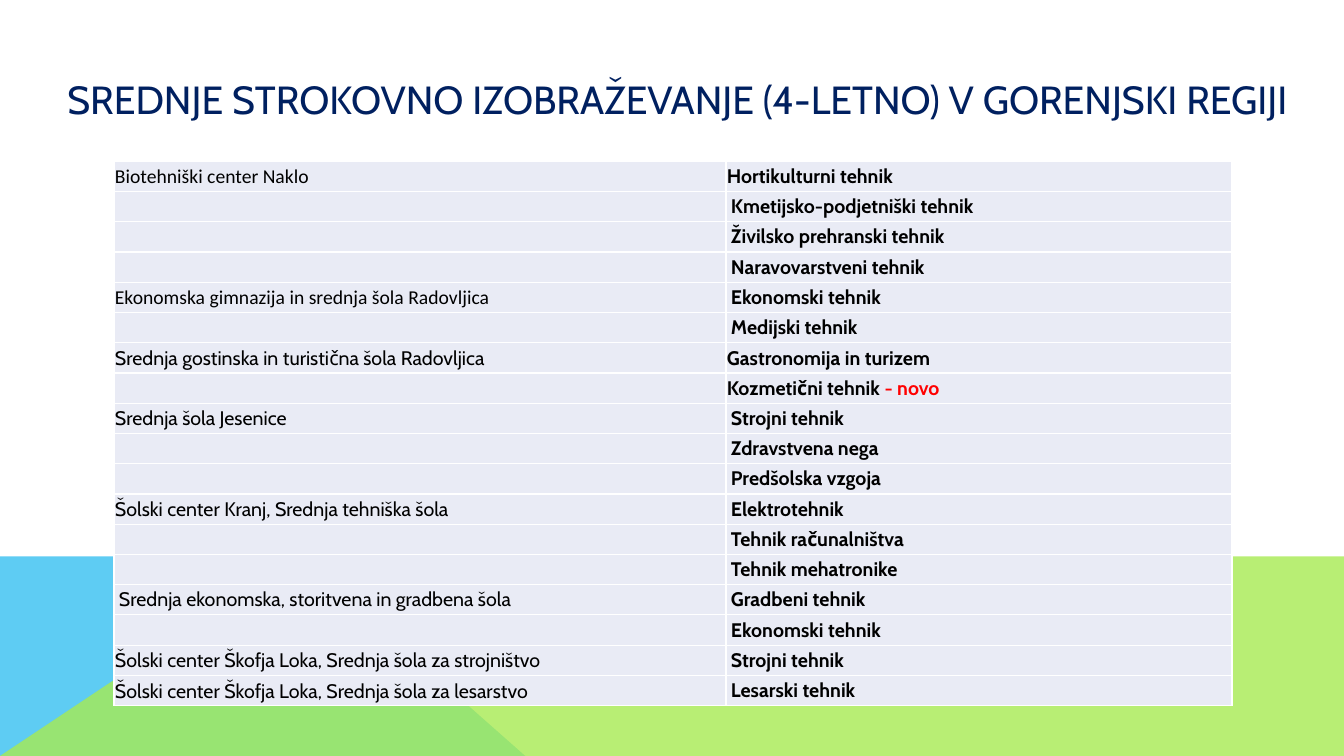
"""Build a slide listing the four-year technical programmes of Gorenjska schools."""
from lxml.etree import SubElement
from pptx import Presentation
from pptx.dml.color import RGBColor
from pptx.enum.text import MSO_ANCHOR
from pptx.oxml.ns import qn
from pptx.util import Inches, Pt

BLUE = RGBColor(0x5E, 0xCC, 0xF3)
GREEN = RGBColor(0xA7, 0xEA, 0x52)
NAVY = RGBColor(0x00, 0x20, 0x60)
BLACK = RGBColor(0x00, 0x00, 0x00)
RED = RGBColor(0xFF, 0x00, 0x00)
LAVENDER = RGBColor(0xE9, 0xEB, 0xF5)
WHITE = RGBColor(0xFF, 0xFF, 0xFF)

TIGHT, INDENTED = 0.01, 0.05
NEW_MARK = "- novo"

SCHOOLS = [
    ("Biotehniški center Naklo", "Calibri", TIGHT, [
        ("Hortikulturni tehnik", TIGHT),
        ("Kmetijsko-podjetniški tehnik", INDENTED),
        ("Živilsko prehranski tehnik", INDENTED),
        ("Naravovarstveni tehnik", INDENTED)]),
    ("Ekonomska gimnazija in srednja šola Radovljica", "Calibri", TIGHT, [
        ("Ekonomski tehnik", INDENTED),
        ("Medijski tehnik", INDENTED)]),
    ("Srednja gostinska in turistična šola Radovljica", "Cabin", TIGHT, [
        ("Gastronomija in turizem", TIGHT),
        ("Kozmetični tehnik " + NEW_MARK, TIGHT)]),
    ("Srednja šola Jesenice", "Cabin", TIGHT, [
        ("Strojni tehnik", INDENTED),
        ("Zdravstvena nega", INDENTED),
        ("Predšolska vzgoja", INDENTED)]),
    ("Šolski center Kranj, Srednja tehniška šola", "Cabin", TIGHT, [
        ("Elektrotehnik", INDENTED),
        ("Tehnik računalništva", INDENTED),
        ("Tehnik mehatronike", INDENTED)]),
    ("Srednja ekonomska, storitvena in gradbena šola", "Cabin", INDENTED, [
        ("Gradbeni tehnik", INDENTED),
        ("Ekonomski tehnik", INDENTED)]),
    ("Šolski center Škofja Loka, Srednja šola za strojništvo", "Cabin", TIGHT, [
        ("Strojni tehnik", INDENTED)]),
    ("Šolski center Škofja Loka, Srednja šola za lesarstvo", "Cabin", TIGHT, [
        ("Lesarski tehnik", INDENTED)]),
]


def add_polygon(slide, points, color, opacity=100):
    """Draw a closed borderless polygon through points in inches."""
    corners = [(Inches(x), Inches(y)) for x, y in points]
    builder = slide.shapes.build_freeform(*corners[0])
    builder.add_line_segments(corners[1:], close=True)
    polygon = builder.convert_to_shape()
    polygon.shadow.inherit = False
    polygon.line.fill.background()
    polygon.fill.solid()
    polygon.fill.fore_color.rgb = color
    if opacity < 100:
        tint = polygon.fill._xPr.find(qn("a:solidFill"))[0]
        SubElement(tint, qn("a:alpha"), val=str(opacity * 1000))


def add_backdrop(slide, left, top, width, height):
    """Draw the blue and green areas along the foot of the slide."""
    right, bottom, peak = left + width, top + height, left + 2.97
    add_polygon(slide, [(left, bottom), (left, top), (peak, top), (left + 5.21, bottom)], BLUE)
    add_polygon(slide, [(left, bottom), (peak, top), (right, top), (right, bottom)], GREEN, 80)


def add_title(slide, left, top, width, height):
    """Write the heading, vertically centred in its box."""
    frame = slide.shapes.add_textbox(
        Inches(left), Inches(top), Inches(width), Inches(height)).text_frame
    frame.word_wrap = True
    frame.vertical_anchor = MSO_ANCHOR.MIDDLE
    heading = frame.paragraphs[0]
    heading.text = "SREDNJE STROKOVNO IZOBRAŽEVANJE (4-LETNO) V GORENJSKI REGIJI"
    heading.font.name = "Cabin"
    heading.font.size = Pt(28)
    heading.font.color.rgb = NAVY


def fill_cell(cell, text, font_name, inset, bold):
    """Style one cell and write its text, with the new-programme mark in red."""
    properties = cell._tc.get_or_add_tcPr()
    for side in ("a:lnL", "a:lnR", "a:lnT", "a:lnB"):
        border = SubElement(properties, qn(side), w=str(Pt(1)))
        SubElement(SubElement(border, qn("a:solidFill")), qn("a:srgbClr"), val=str(WHITE))
    cell.fill.solid()
    cell.fill.fore_color.rgb = LAVENDER
    cell.vertical_anchor = MSO_ANCHOR.MIDDLE
    cell.margin_left = cell.margin_right = Inches(inset)
    cell.margin_top = Inches(0.01 if inset == TIGHT else 0)
    cell.margin_bottom = 0
    entry = cell.text_frame.paragraphs[0]
    entry.font.name = font_name
    entry.font.size = Pt(14)
    entry.font.bold = bold
    entry.font.color.rgb = BLACK
    name, mark, _ = text.partition(NEW_MARK)
    if name:
        entry.add_run().text = name
    if mark:
        new_mark = entry.add_run()
        new_mark.text = mark
        new_mark.font.color.rgb = RED


def add_programmes(slide, left, top, width, height):
    """Lay out the schools and their programmes as a two-column table."""
    row_count = sum(len(programmes) for *_, programmes in SCHOOLS)
    table = slide.shapes.add_table(
        row_count, 2, Inches(left), Inches(top), Inches(width), Inches(height)).table
    table.first_row = table.horz_banding = False
    school_width = 6.07
    table.columns[0].width = Inches(school_width)
    table.columns[1].width = Inches(width - school_width)
    row = 0
    for school, font_name, school_inset, programmes in SCHOOLS:
        for index, (programme, inset) in enumerate(programmes):
            label = school if index == 0 else ""
            fill_cell(table.cell(row, 0), label, font_name, school_inset, False)
            fill_cell(table.cell(row, 1), programme, "Cabin", inset, True)
            row += 1


def main():
    """Assemble and save the slide."""
    deck = Presentation()
    deck.slide_width, deck.slide_height = Inches(13.33), Inches(7.5)
    slide = deck.slides.add_slide(deck.slide_layouts[6])
    add_backdrop(slide, 0, 5.52, 13.33, 1.98)
    add_title(slide, 0.57, -0.36, 12.63, 2.68)
    add_programmes(slide, 1.13, 1.6, 11.09, 5.4)
    deck.save("out.pptx")


if __name__ == "__main__":
    main()
